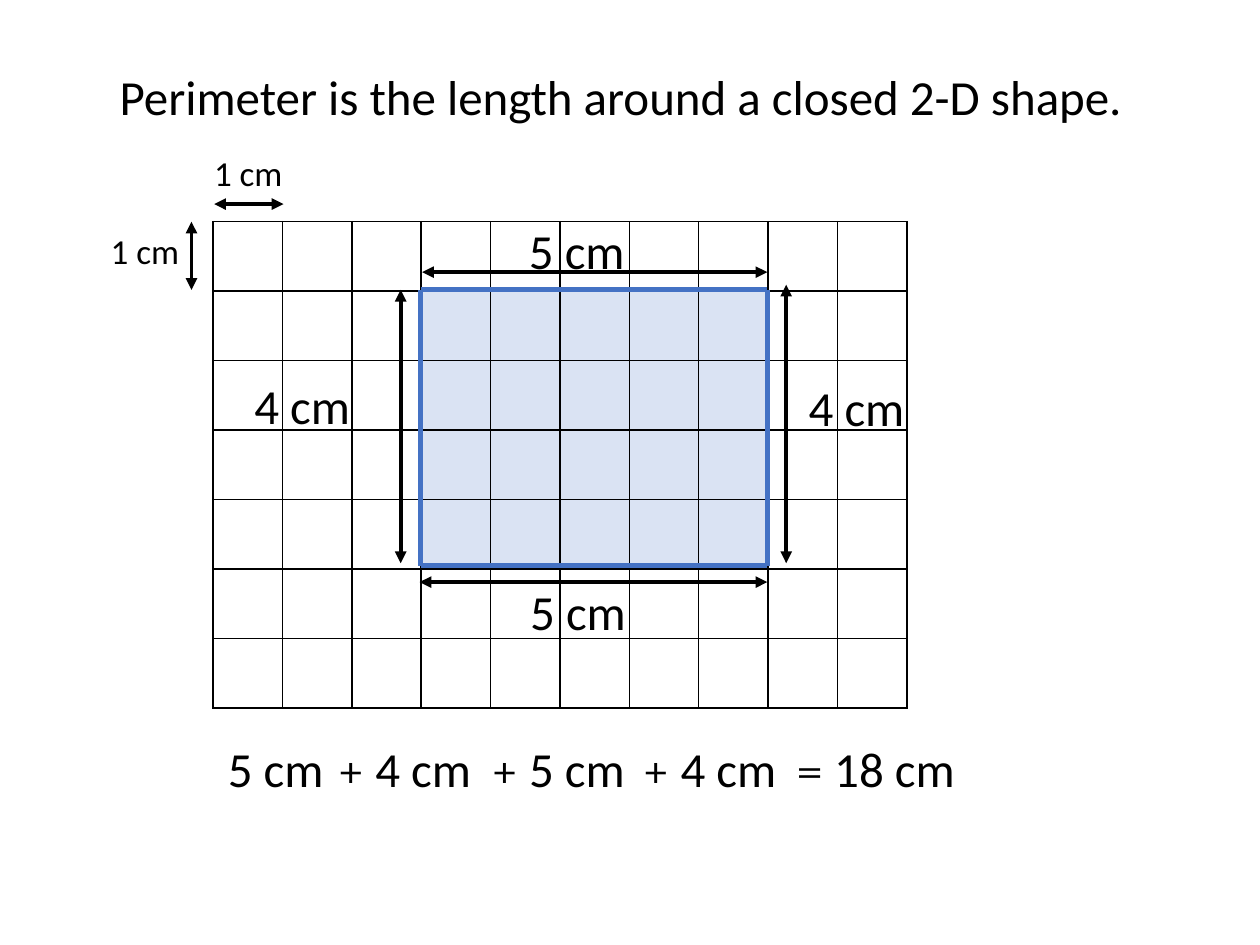
from pptx import Presentation
from pptx.dml.color import RGBColor
from pptx.enum.shapes import MSO_CONNECTOR
from pptx.enum.text import MSO_ANCHOR, MSO_AUTO_SIZE, PP_ALIGN
from pptx.oxml.ns import qn
from pptx.util import Inches, Pt
from lxml import etree

STRAIGHT = MSO_CONNECTOR.STRAIGHT
LEFT = PP_ALIGN.LEFT
MIDDLE = MSO_ANCHOR.MIDDLE
TOP = MSO_ANCHOR.TOP
GROW = MSO_AUTO_SIZE.SHAPE_TO_FIT_TEXT

BLACK = "000000"
BLUE = "4472C4"
PALE_BLUE = "DAE3F3"


def color(value):
    return RGBColor.from_string(value)


class SlideBuilder:
    text_font = "Calibri"
    sign_font = "Cambria"
    text_size = 28
    small_size = 20

    def __init__(self, slide):
        self.slide = slide

    def format_run(self, run, size, font):
        run.font.size = Pt(size)
        run.font.name = font
        run.font.color.rgb = color(BLACK)

    def place(self, shape, left, top, width, height):
        shape.left, shape.top = Inches(left), Inches(top)
        shape.width, shape.height = Inches(width), Inches(height)

    def title(self, text, *box):
        shape = self.slide.shapes.title
        self.place(shape, *box)
        text_frame = shape.text_frame
        text_frame.text = text
        text_frame.word_wrap = False
        text_frame.auto_size = GROW
        text_frame.vertical_anchor = MIDDLE
        paragraph = text_frame.paragraphs[0]
        paragraph.alignment = LEFT
        paragraph.line_spacing = 1.0
        self.format_run(paragraph.runs[0], self.text_size, self.text_font)

    def label(self, text, left, top, width, size=text_size, sign=""):
        height = 0.57 if size == self.text_size else 0.44
        shape = self.slide.shapes.add_textbox(
            Inches(left), Inches(top), Inches(width), Inches(height))
        text_frame = shape.text_frame
        text_frame.word_wrap = False
        text_frame.auto_size = GROW
        text_frame.vertical_anchor = TOP
        paragraph = text_frame.paragraphs[0]
        for part, font in ((sign, self.sign_font), (text, self.text_font)):
            if part:
                run = paragraph.add_run()
                run.text = part
                self.format_run(run, size, font)

    def line(self, start, end, line_color=BLUE, width=3):
        connector = self.slide.shapes.add_connector(
            STRAIGHT, *map(Inches, start + end))
        connector.line.color.rgb = color(line_color)
        connector.line.width = Pt(width)
        etree.SubElement(connector._element.spPr, qn("a:effectLst"))
        return connector

    def double_arrow(self, start, end):
        connector = self.line(start, end, BLACK, 2.25)
        outline = connector.line._get_or_add_ln()
        for tag in ("a:headEnd", "a:tailEnd"):
            etree.SubElement(outline, qn(tag), type="triangle")

    def border(self, cell):
        properties = cell._tc.get_or_add_tcPr()
        for tag in ("a:lnL", "a:lnR", "a:lnT", "a:lnB"):
            edge = etree.SubElement(properties, qn(tag), w=str(Pt(1)))
            fill = etree.SubElement(edge, qn("a:solidFill"))
            etree.SubElement(fill, qn("a:srgbClr"), val=BLACK)

    def grid(self, rows, columns, shaded_rows, shaded_columns, *box):
        table = self.slide.shapes.add_table(
            rows, columns, *map(Inches, box)).table
        table.first_row = False
        table.horz_banding = False
        for row in range(rows):
            for column in range(columns):
                cell = table.cell(row, column)
                self.border(cell)
                if row in shaded_rows and column in shaded_columns:
                    cell.fill.solid()
                    cell.fill.fore_color.rgb = color(PALE_BLUE)
                else:
                    cell.fill.background()


def main():
    presentation = Presentation()
    presentation.slide_width = Inches(10)
    presentation.slide_height = Inches(7.5)
    slide = presentation.slides.add_slide(presentation.slide_layouts[5])
    builder = SlideBuilder(slide)

    builder.title("Perimeter is the length around a closed 2-D shape.",
                  0.85, 0.48, 8.25, 0.57)
    builder.grid(7, 10, range(1, 5), range(3, 8), 1.69, 1.76, 5.51, 3.86)

    left, top, right, bottom = 3.34, 2.3, 6.09, 4.49
    corners = [(left, top), (right, top), (right, bottom), (left, bottom)]
    for start, end in zip(corners, corners[1:] + corners[:1]):
        builder.line(start, end)

    for start, end in [
        ((1.52, 1.76), (1.52, 2.3)),
        ((1.7, 1.62), (2.25, 1.62)),
        ((3.18, 2.3), (3.18, 4.47)),
        ((3.33, 4.62), (6.09, 4.62)),
        ((6.24, 2.26), (6.24, 4.47)),
        ((3.35, 2.16), (6.09, 2.16)),
    ]:
        builder.double_arrow(start, end)

    for label_left, label_top in [(0.78, 1.77), (1.6, 1.15)]:
        builder.label("1 cm", label_left, label_top, 0.75, builder.small_size)

    for text, label_left, label_top in [
        ("4 cm", 1.92, 2.93),
        ("5 cm", 4.11, 4.57),
        ("4 cm", 6.32, 2.95),
        ("5 cm", 4.1, 1.7),
    ]:
        builder.label(text, label_left, label_top, 0.97)

    for sign, text, label_left, width in [
        ("", "5 cm", 1.71, 0.97),
        ("+ ", "4 cm", 2.58, 1.35),
        ("+ ", "5 cm", 3.8, 1.35),
        ("+", " 4 cm", 5, 1.35),
        ("=", " 18 cm", 6.22, 1.55),
    ]:
        builder.label(text, label_left, 5.81, width, sign=sign)

    presentation.save("out.pptx")


if __name__ == "__main__":
    main()
